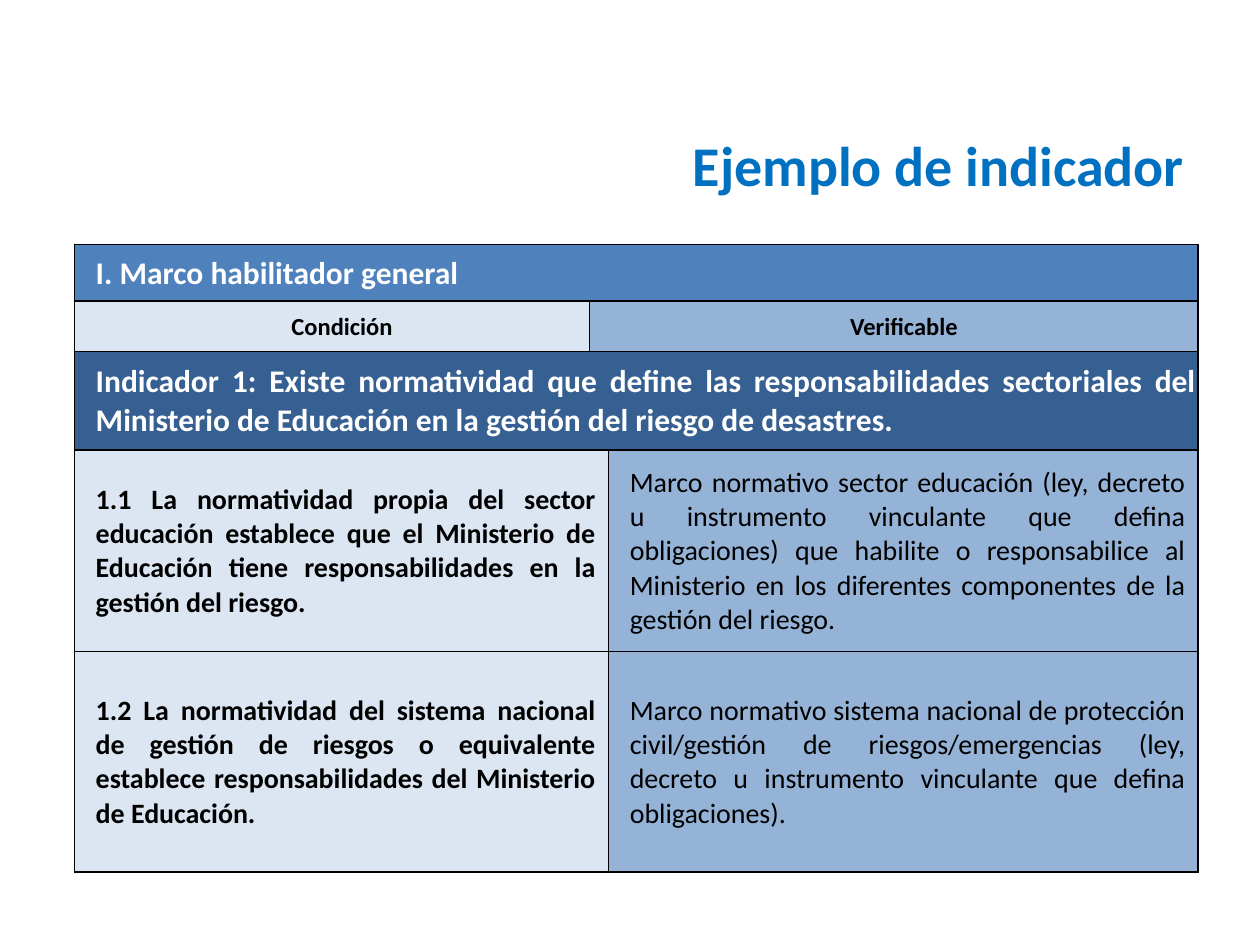
from lxml import etree
from pptx import Presentation
from pptx.dml.color import RGBColor
from pptx.enum.text import MSO_ANCHOR, PP_ALIGN
from pptx.oxml.ns import qn
from pptx.util import Inches, Pt

LEFT, CENTER, RIGHT = PP_ALIGN.LEFT, PP_ALIGN.CENTER, PP_ALIGN.RIGHT
JUSTIFY = PP_ALIGN.JUSTIFY
MIDDLE = MSO_ANCHOR.MIDDLE

FONT = "Calibri"
COLORS = {
    "title": "0070C0",
    "section": "4F81BD",
    "indicator": "376092",
    "condition": "DCE6F2",
    "verifiable": "95B3D7",
    "white": "FFFFFF",
    "black": "000000",
}

COL_WIDTHS = [4.09, 0.05, 4.68]
ROW_HEIGHTS = [0.45, 0.4, 0.78, 1.6, 1.75]
INDENT = 0.16

# Format of each kind of cell
STYLES = {
    "section": dict(fill="section", color="white", size=18, bold=True, align=LEFT),
    "head_condition": dict(fill="condition", color="black", size=14, bold=True, align=CENTER),
    "head_verifiable": dict(fill="verifiable", color="black", size=14, bold=True, align=CENTER),
    "indicator": dict(fill="indicator", color="white", size=18, bold=True, align=JUSTIFY),
    "condition": dict(fill="condition", color="black", size=16, bold=True, align=JUSTIFY, right=0.1),
    "verifiable": dict(fill="verifiable", color="black", size=16, bold=False, align=JUSTIFY, right=0.1),
}

# Cells of each row: style, columns spanned, text
ROWS = [
    [("section", 3, "I. Marco habilitador general")],
    [("head_condition", 1, "Condición"), ("head_verifiable", 2, "Verificable")],
    [("indicator", 3,
      "Indicador 1: Existe normatividad que define las responsabilidades "
      "sectoriales del Ministerio de Educación en la gestión del riesgo de desastres.")],
    [("condition", 2,
      "1.1 La normatividad propia del sector educación establece que el "
      "Ministerio de Educación tiene responsabilidades en la gestión del riesgo."),
     ("verifiable", 1,
      "Marco normativo sector educación (ley, decreto u instrumento vinculante "
      "que defina obligaciones) que habilite o responsabilice al Ministerio en "
      "los diferentes componentes de la gestión del riesgo.")],
    [("condition", 2,
      "1.2 La normatividad del sistema nacional de gestión de riesgos o "
      "equivalente establece responsabilidades del Ministerio de Educación."),
     ("verifiable", 1,
      "Marco normativo sistema nacional de protección civil/gestión de "
      "riesgos/emergencias (ley, decreto u instrumento vinculante que defina "
      "obligaciones).")],
]


def rgb(name):
    return RGBColor.from_string(COLORS[name])


def write(p, text, size, color, bold, align):
    p.alignment = align
    r = p.add_run()
    r.text = text
    for name, value in dict(name=FONT, size=Pt(size), bold=bold).items():
        setattr(r.font, name, value)
    r.font.color.rgb = rgb(color)


def add_title(s, text):
    sp = s.shapes.add_textbox(Inches(3.42), Inches(0.92), Inches(6.08), Inches(0.77))
    tf = sp.text_frame
    tf.word_wrap = True
    tf.vertical_anchor = MIDDLE
    write(tf.paragraphs[0], text, 32, "title", True, RIGHT)


def set_borders(cell):
    """Draw a thin black line on the four sides; borders precede the fill."""
    tc_pr = cell._tc.get_or_add_tcPr()
    for i, side in enumerate(("a:lnL", "a:lnR", "a:lnT", "a:lnB")):
        ln = etree.Element(qn(side), w=str(Pt(1)))
        fill = etree.SubElement(ln, qn("a:solidFill"))
        etree.SubElement(fill, qn("a:srgbClr"), val=COLORS["black"])
        tc_pr.insert(i, ln)


def fill_cell(cell, text, fill, color, size, bold, align, right=0.01):
    cell.vertical_anchor = MIDDLE
    margins = dict(left=0.01, top=0.01, right=right, bottom=0)
    for side, value in margins.items():
        setattr(cell, f"margin_{side}", Inches(value))
    p = cell.text_frame.paragraphs[0]
    write(p, text, size, color, bold, align)
    p_pr = p._p.get_or_add_pPr()
    p_pr.set("marL", str(Inches(INDENT)))
    p_pr.set("indent", "0")


def add_indicator_table(s):
    frame = s.shapes.add_table(len(ROW_HEIGHTS), len(COL_WIDTHS), Inches(0.59), Inches(1.94),
                               Inches(sum(COL_WIDTHS)), Inches(sum(ROW_HEIGHTS)))
    table = frame.table
    for column, width in zip(table.columns, COL_WIDTHS):
        column.width = Inches(width)
    for row, height in zip(table.rows, ROW_HEIGHTS):
        row.height = Inches(height)

    for i, cells in enumerate(ROWS):
        col = 0
        for style, span, text in cells:
            cell = table.cell(i, col)
            if span > 1:
                cell.merge(table.cell(i, col + span - 1))
            fill_cell(cell, text, **STYLES[style])
            # Covered cells share the fill and borders of their span
            for j in range(col, col + span):
                part = table.cell(i, j)
                part.fill.solid()
                part.fill.fore_color.rgb = rgb(STYLES[style]["fill"])
                set_borders(part)
            col += span


def main():
    prs = Presentation()
    prs.slide_width, prs.slide_height = Inches(10), Inches(7.5)
    s = prs.slides.add_slide(prs.slide_layouts[6])
    add_title(s, "Ejemplo de indicador")
    add_indicator_table(s)
    prs.save("out.pptx")


if __name__ == "__main__":
    main()
